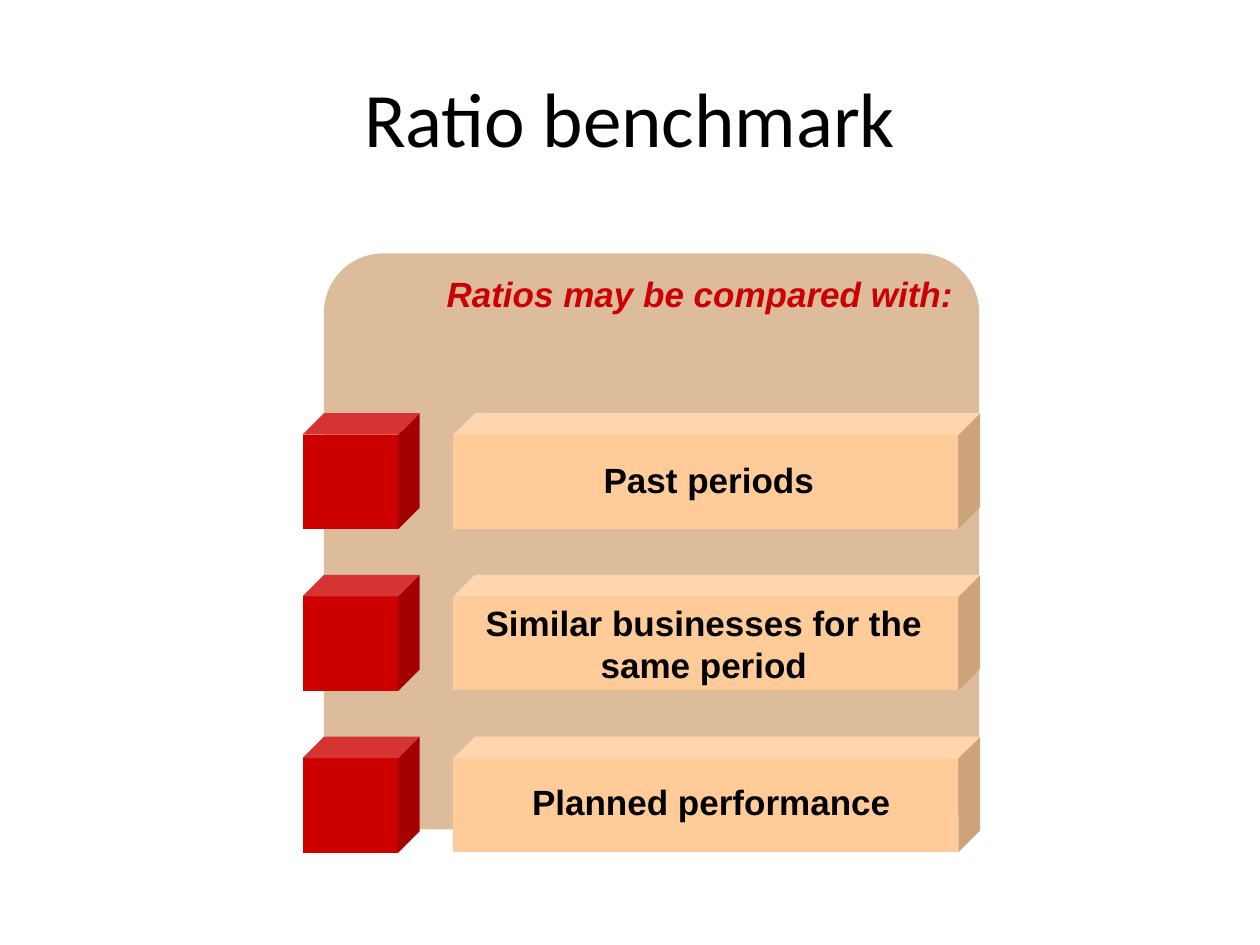
from pptx import Presentation
from pptx import util as u
from pptx.dml.color import RGBColor
from pptx.enum import shapes, text

HUES = {
    "panel": "DDBC9B",
    "bar": "FFCC99",
    "red": "CC0000",
    "ink": "000000",
}

# Label, its left, its top offset from the bar, its height (cm)
ROWS = [
    ("Past periods", 9.17, 0.79, 1.09),
    ("Similar businesses for the same period", 9.07, 0.4, 1.96),
    ("Planned performance", 9.22, 0.77, 1.09),
]
TOP, STEP = 8.33, 3.26


def add_block(slide, kind, box, hue, adj):
    """Plain filled shape without outline."""
    block = slide.shapes.add_shape(kind, *map(u.Cm, box))
    block.shadow.inherit = False
    block.adjustments[0] = adj
    block.fill.solid()
    block.fill.fore_color.rgb = RGBColor.from_string(HUES[hue])
    block.line.fill.background()


def add_label(slide, words, box, hue="ink", size=20, face="Arial",
              bold=True, slant=False):
    """Centred line of text."""
    frame = slide.shapes.add_textbox(*map(u.Cm, box)).text_frame
    frame.word_wrap = True
    frame.vertical_anchor = text.MSO_ANCHOR.MIDDLE
    para = frame.paragraphs[0]
    para.text = words
    para.alignment = text.PP_ALIGN.CENTER
    font = para.font
    font.name, font.size = face, u.Pt(size)
    font.bold, font.italic = bold, slant
    font.color.rgb = RGBColor.from_string(HUES[hue])


def add_row(slide, top, words, left, drop, height):
    """Red cube, long bar and the label on it."""
    cube = shapes.MSO_SHAPE.CUBE
    add_block(slide, cube, (9.14, top, 10.62, 2.33), "bar", 0.188)
    add_block(slide, cube, (6.1, top, 2.36, 2.34), "red", 0.185)
    add_label(slide, words, (left, top + drop, 10.24, height))


def main():
    deck = Presentation()
    deck.slide_width, deck.slide_height = u.Cm(25.4), u.Cm(19.05)
    slide = deck.slides.add_slide(deck.slide_layouts[6])

    # Title
    add_label(slide, "Ratio benchmark", (1.27, 0.76, 22.86, 3.18),
              size=44, face="Calibri", bold=False)

    # Panel with heading
    add_block(slide, shapes.MSO_SHAPE.ROUNDED_RECTANGLE,
              (6.53, 5.11, 13.21, 11.61), "panel", 0.103)
    add_label(slide, "Ratios may be compared with:",
              (8.74, 5.38, 10.74, 1.09), hue="red", slant=True)

    # Benchmarks
    for i, row in enumerate(ROWS):
        add_row(slide, TOP + i * STEP, *row)

    deck.save("out.pptx")


if __name__ == "__main__":
    main()
